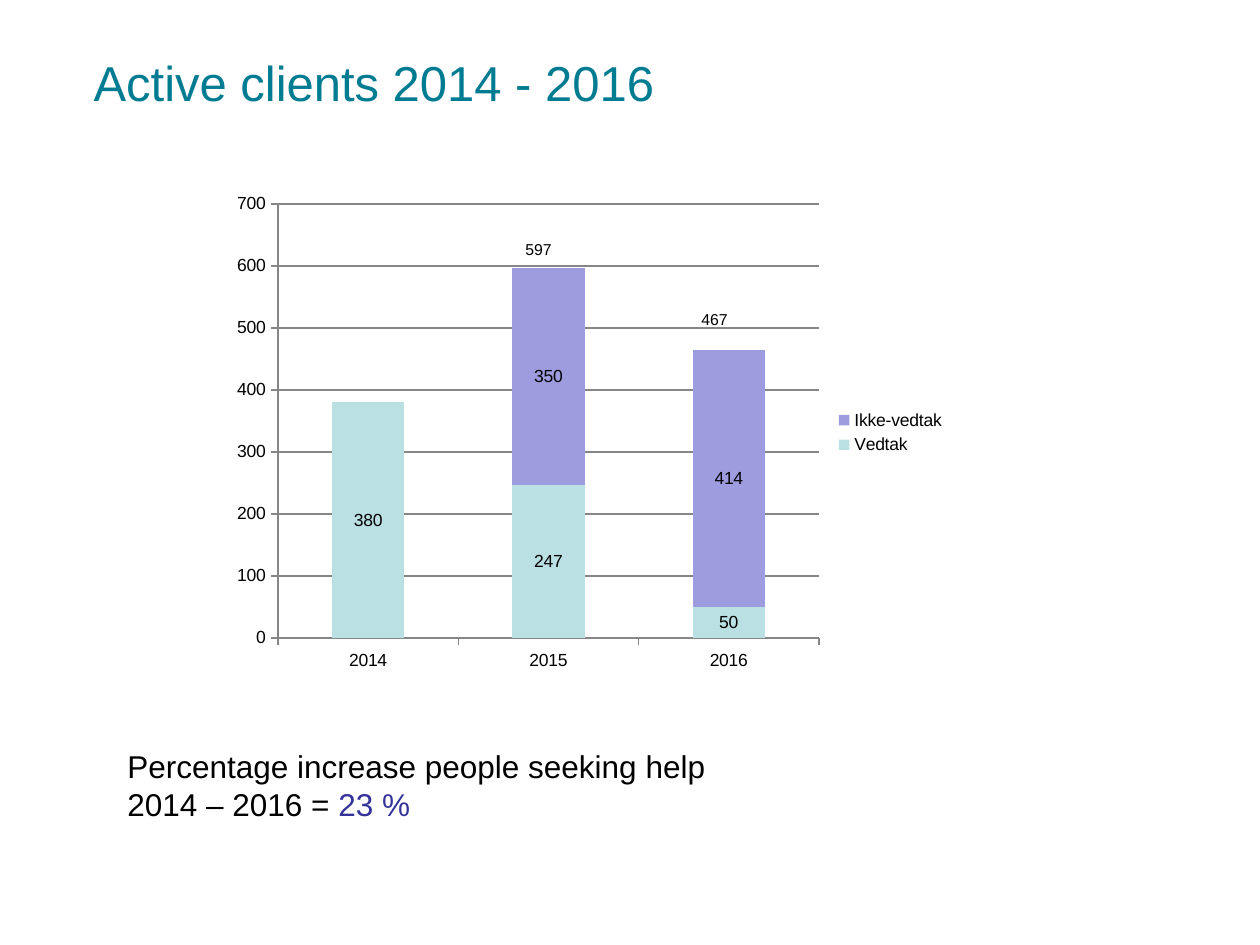
"""Build a slide with a stacked column chart of active clients."""
from dataclasses import dataclass

from lxml import etree
from pptx import Presentation
from pptx.chart.data import CategoryChartData
from pptx.dml.color import RGBColor
from pptx.enum.chart import XL_CHART_TYPE, XL_LABEL_POSITION, XL_LEGEND_POSITION, XL_TICK_MARK
from pptx.enum.text import MSO_ANCHOR, PP_ALIGN
from pptx.oxml.ns import qn
from pptx.util import Emu, Pt

STACKED = XL_CHART_TYPE.COLUMN_STACKED
CENTER = XL_LABEL_POSITION.CENTER
RIGHT = XL_LEGEND_POSITION.RIGHT
OUTSIDE = XL_TICK_MARK.OUTSIDE
NO_TICK = XL_TICK_MARK.NONE
MIDDLE = MSO_ANCHOR.MIDDLE
LEFT = PP_ALIGN.LEFT

EMU_PER_PX = 914400 / 126
FONT = "Arial"
BLACK, TEAL, INDIGO, GREY = "000000", "007C92", "333399", "868686"


@dataclass
class Box:
    x: int
    y: int
    w: int
    h: int

    def emu(self) -> list[Emu]:
        return [px(n) for n in (self.x, self.y, self.w, self.h)]


@dataclass
class Run:
    text: str
    color: str = BLACK


@dataclass
class Label:
    box: Box
    size: int
    runs: list[Run]


@dataclass
class Series:
    name: str
    values: list[int | None]
    color: str


YEARS = ["2014", "2015", "2016"]
SERIES = [
    Series("Vedtak", [380, 247, 50], "BBE0E3"),
    Series("Ikke-vedtak", [None, 350, 414], "9C9CDF"),
]
CHART_BOX = Box(223, 185, 735, 495)
PLOT_BOX = Box(278, 204, 541, 434)
LABELS = [
    Label(Box(115, 741, 635, 89), 18, [
        Run("Percentage increase people seeking help 2014 – 2016 = "),
        Run("23 %", INDIGO),
    ]),
    Label(Box(513, 234, 59, 32), 9, [Run("597")]),
    Label(Box(689, 304, 59, 32), 9, [Run("467")]),
]


def px(n: int) -> Emu:
    return Emu(round(n * EMU_PER_PX))


def rgb(color: str) -> RGBColor:
    return RGBColor.from_string(color)


def style_font(font, size: int, color: str) -> None:
    font.name = FONT
    font.size = Pt(size)
    font.color.rgb = rgb(color)


def add_title(s, text: str, box: Box) -> None:
    sp = s.shapes.title
    sp.left, sp.top, sp.width, sp.height = box.emu()
    tf = sp.text_frame
    tf.text = text
    tf.vertical_anchor = MIDDLE
    p = tf.paragraphs[0]
    p.alignment = LEFT
    style_font(p.font, 28, TEAL)


def add_label(s, label: Label) -> None:
    tf = s.shapes.add_textbox(*label.box.emu()).text_frame
    tf.word_wrap = True
    p = tf.paragraphs[0]
    style_font(p.font, label.size, BLACK)
    for run in label.runs:
        r = p.add_run()
        r.text = run.text
        r.font.color.rgb = rgb(run.color)


def place_plot(chart, plot: Box, frame: Box) -> None:
    area = chart.plots[0]._element.getparent()
    layout = area.find(qn("c:layout"))
    if layout is None:
        layout = etree.Element(qn("c:layout"))
        area.insert(0, layout)
    manual = etree.SubElement(layout, qn("c:manualLayout"))
    settings = {
        "layoutTarget": "inner", "xMode": "edge", "yMode": "edge",
        "x": round((plot.x - frame.x) / frame.w, 4),
        "y": round((plot.y - frame.y) / frame.h, 4),
        "w": round(plot.w / frame.w, 4),
        "h": round(plot.h / frame.h, 4),
    }
    for tag, value in settings.items():
        etree.SubElement(manual, qn(f"c:{tag}")).set("val", str(value))


def style_line(line) -> None:
    line.color.rgb = rgb(GREY)
    line.width = Pt(0.75)


def add_clients_chart(s) -> None:
    data = CategoryChartData()
    data.categories = YEARS
    for series in SERIES:
        data.add_series(series.name, series.values)
    chart = s.shapes.add_chart(STACKED, *CHART_BOX.emu(), data).chart
    style_font(chart.font, 10, BLACK)
    chart.has_title = False
    chart.has_legend = True
    chart.legend.position = RIGHT
    chart.legend.include_in_layout = False
    place_plot(chart, PLOT_BOX, CHART_BOX)

    for axis in (chart.category_axis, chart.value_axis):
        axis.major_tick_mark = OUTSIDE
        axis.minor_tick_mark = NO_TICK
        style_line(axis.format.line)
    axis = chart.value_axis
    axis.minimum_scale, axis.maximum_scale, axis.major_unit = 0, 700, 100
    axis.has_major_gridlines = True
    style_line(axis.major_gridlines.format.line)

    plot = chart.plots[0]
    plot.gap_width, plot.overlap = 150, 100
    plot.vary_by_categories = False
    for drawn, series in zip(plot.series, SERIES):
        drawn.format.fill.solid()
        drawn.format.fill.fore_color.rgb = rgb(series.color)
        labels = drawn.data_labels
        labels.show_value = True
        labels.position = CENTER
        style_font(labels.font, 10, BLACK)


def main() -> None:
    prs = Presentation()
    prs.slide_width, prs.slide_height = px(1260), px(945)
    s = prs.slides.add_slide(prs.slide_layouts[5])
    add_title(s, "Active clients 2014 - 2016", Box(81, 38, 1134, 87))
    add_clients_chart(s)
    for label in LABELS:
        add_label(s, label)
    prs.save("out.pptx")


if __name__ == "__main__":
    main()
